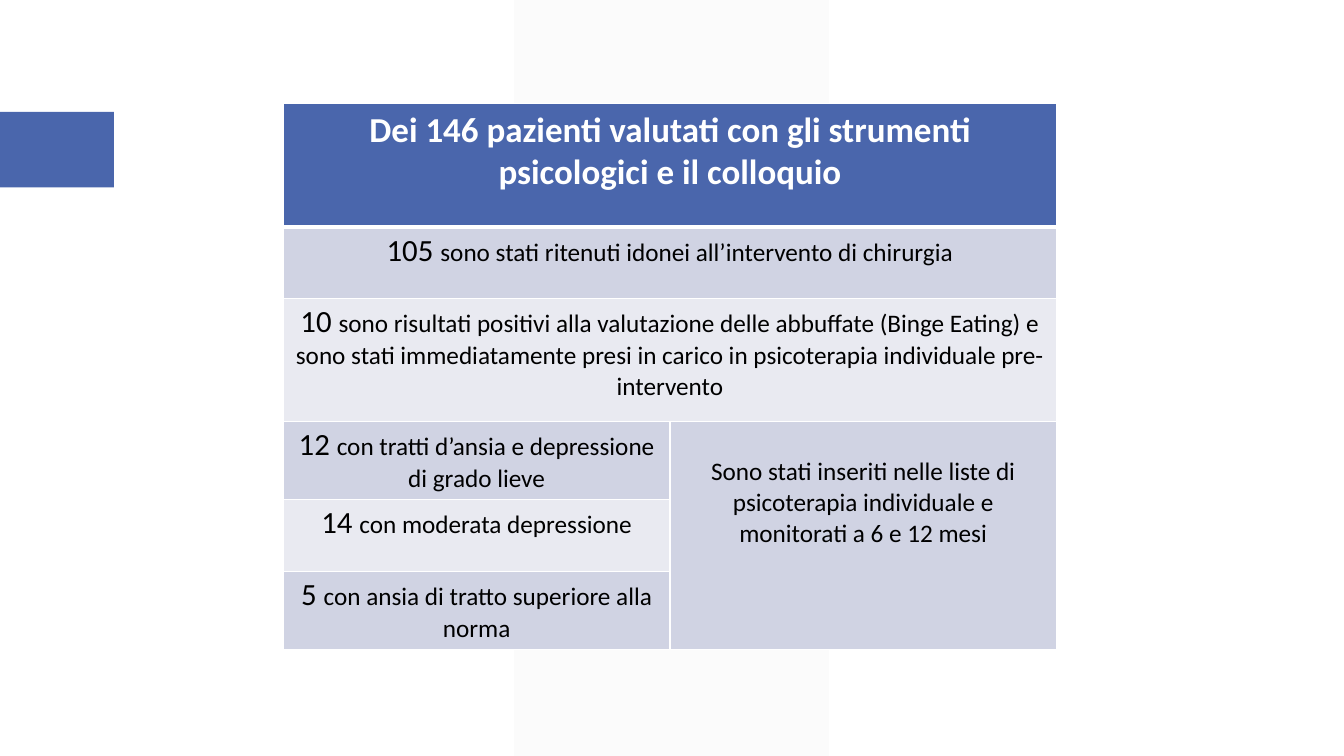
import pptx
import pptx.util
import pptx.dml.color
import pptx.enum.shapes
import pptx.enum.text
import pptx.oxml
import pptx.oxml.ns

Inches = pptx.util.Inches
Pt = pptx.util.Pt
RGBColor = pptx.dml.color.RGBColor
SHAPE = pptx.enum.shapes.MSO_SHAPE

WHITE = RGBColor(0xFF, 0xFF, 0xFF)
BLACK = RGBColor(0, 0, 0)
BLUE = RGBColor(0x4A, 0x66, 0xAC)
DARK = RGBColor(0xD0, 0xD3, 0xE3)
LIGHT = RGBColor(0xE9, 0xEA, 0xF1)
GREY = RGBColor(0xF2, 0xF2, 0xF2)
FONT = "Calibri"

HEAD = "Dei 146 pazienti valutati con gli strumenti psicologici e il colloquio"
GROUPS = [
    ("105", "sono stati ritenuti idonei all’intervento di chirurgia"),
    ("10", "sono risultati positivi alla valutazione delle abbuffate (Binge Eating) e "
           "sono stati immediatamente presi in carico in psicoterapia individuale "
           "pre-intervento"),
    ("12", "con tratti d’ansia e depressione di grado lieve"),
    ("14", "con moderata depressione"),
    ("5", "con ansia di tratto superiore alla norma"),
]
CARE = ("Sono stati inseriti nelle liste di psicoterapia individuale "
        "e monitorati a 6 e 12 mesi")
HEIGHTS = [1.22, 0.71, 1.22, 0.76, 0.71, 0.76]


def add_block(slide, kind, box, color):
    block = slide.shapes.add_shape(kind, *map(Inches, box))
    block.shadow.inherit = False
    block.fill.solid()
    block.fill.fore_color.rgb = color
    block.line.fill.background()
    return block


def add_band(slide, box):
    """Add the pale, see-through stripe behind the table."""
    band = add_block(slide, SHAPE.PARALLELOGRAM, box, GREY)
    band.adjustments[0] = 0
    color = band.fill._xPr.find(".//" + pptx.oxml.ns.qn("a:srgbClr"))
    color.append(pptx.oxml.parse_xml(
        f'<a:alpha {pptx.oxml.ns.nsdecls("a")} val="30000"/>'))


def set_edges(cell, top=1, bottom=1):
    """Draw white borders, with widths in points."""
    props = cell._tc.get_or_add_tcPr()
    widths = {"L": 1, "R": 1, "T": top, "B": bottom}
    for index, (side, width) in enumerate(widths.items()):
        props.insert(index, pptx.oxml.parse_xml(
            f'<a:ln{side} {pptx.oxml.ns.nsdecls("a")} w="{Pt(width)}">'
            f'<a:solidFill><a:srgbClr val="{WHITE}"/></a:solidFill></a:ln{side}>'))


def write_cell(cell, parts, color, bold=False):
    """Write (text, size) parts as one centred paragraph."""
    line = cell.text_frame.paragraphs[0]
    line.alignment = pptx.enum.text.PP_ALIGN.CENTER
    line.font.name = FONT
    line.font.bold = bold
    line.font.color.rgb = color
    for text, size in parts:
        run = line.add_run()
        run.text = text
        run.font.size = Pt(size)


def add_table(slide, box):
    left, top, width, height = map(Inches, box)
    table = slide.shapes.add_table(len(HEIGHTS), 2, left, top, width, height).table
    table.first_row = table.horz_banding = False
    for row, size in zip(table.rows, HEIGHTS):
        row.height = Inches(size)

    for row in range(len(HEIGHTS)):
        for col in range(2):
            cell = table.cell(row, col)
            cell.margin_left = cell.margin_right = Inches(0.09)
            cell.margin_top = cell.margin_bottom = Inches(0.05)
            cell.fill.solid()
            shade = DARK if row % 2 or col else LIGHT
            cell.fill.fore_color.rgb = shade if row else BLUE
            set_edges(cell, 3 if row == 1 else 1, 1 if row else 3)

    for row in range(3):
        table.cell(row, 0).merge(table.cell(row, 1))
    care = table.cell(3, 1)
    care.merge(table.cell(5, 1))
    care.margin_top = Inches(0.35)

    write_cell(table.cell(0, 0), [(HEAD, 25)], WHITE, bold=True)
    for row, (count, text) in enumerate(GROUPS, 1):
        write_cell(table.cell(row, 0), [(count + " ", 22), (text, 18)], BLACK)
    write_cell(care, [(CARE, 18)], BLACK)


def main():
    deck = pptx.Presentation()
    deck.slide_width, deck.slide_height = Inches(13.33), Inches(7.5)
    slide = deck.slides.add_slide(deck.slide_layouts[6])
    add_band(slide, (5.1, 0, 3.12, 7.5))
    add_block(slide, SHAPE.RECTANGLE, (0, 1.11, 1.13, 0.75), BLUE)
    add_table(slide, (2.81, 1.03, 7.67, sum(HEIGHTS)))
    deck.save("out.pptx")


if __name__ == "__main__":
    main()
